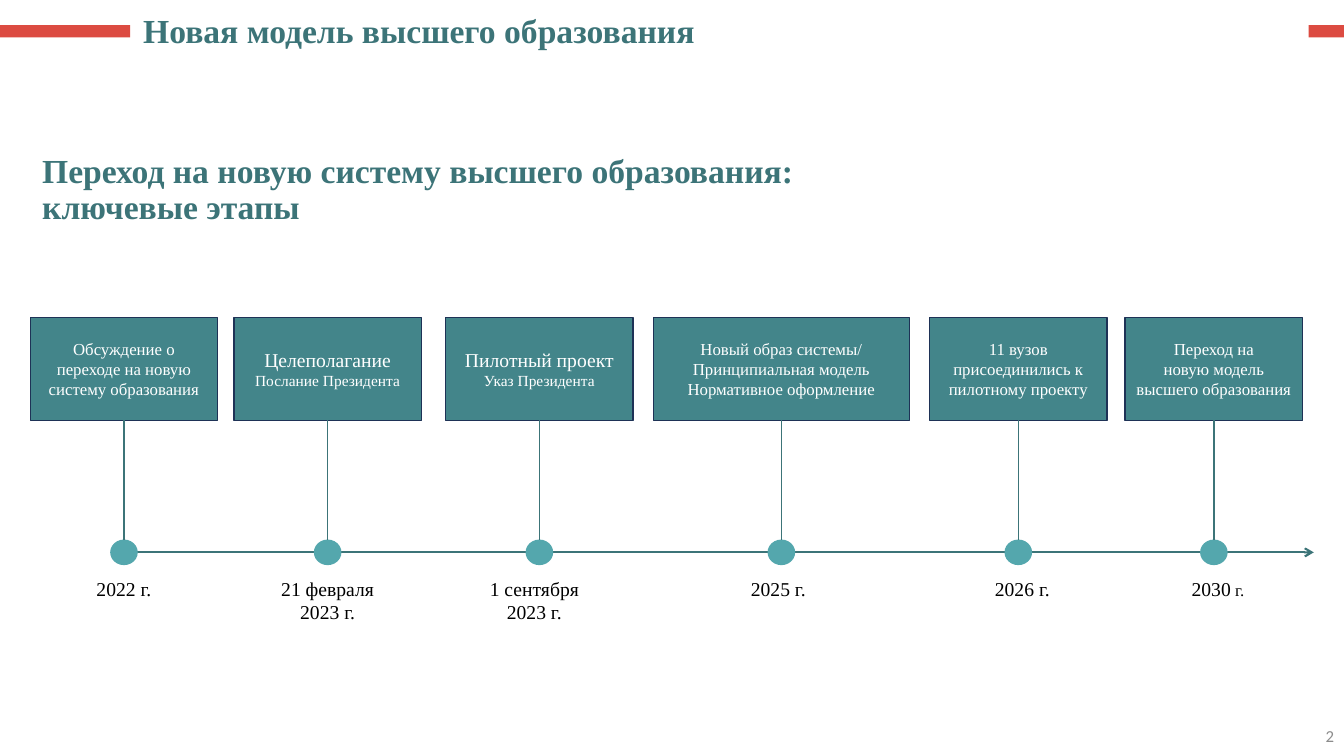
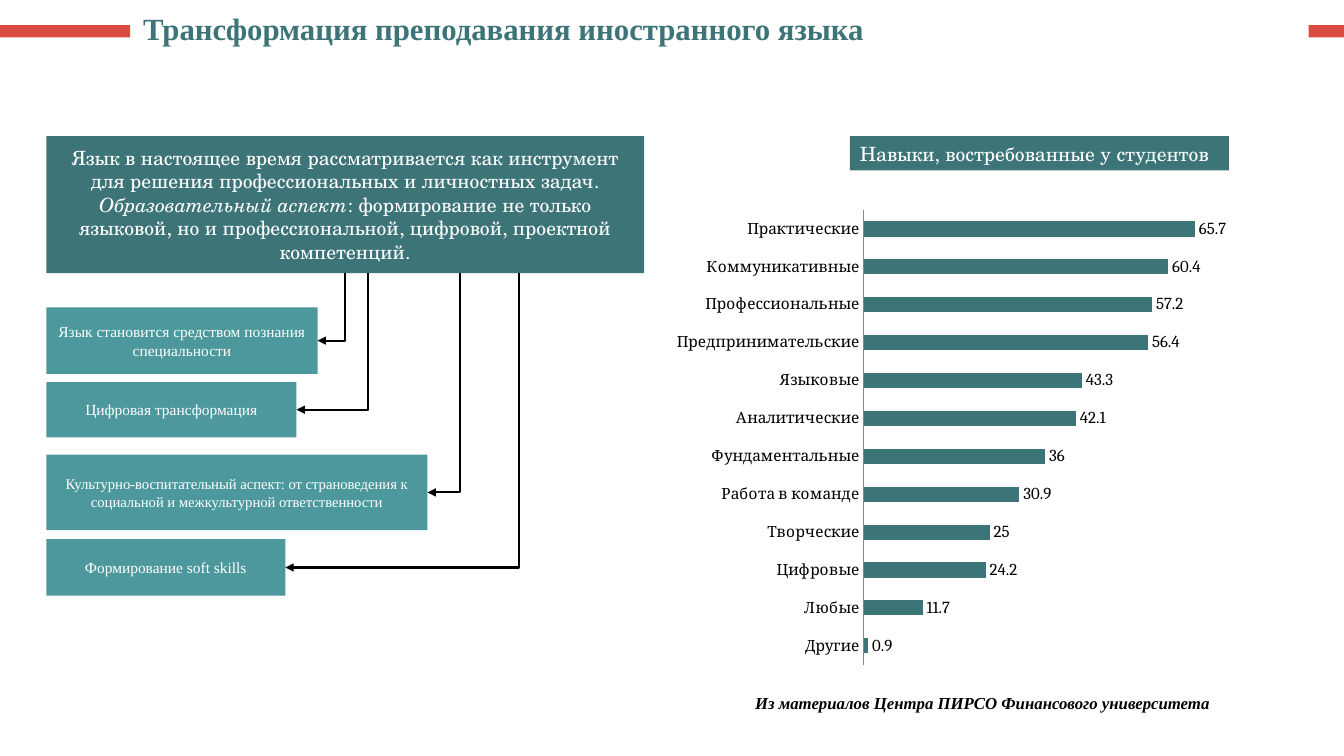
from dataclasses import dataclass

from lxml import etree
from pptx import Presentation
from pptx.chart.data import CategoryChartData
from pptx.dml.color import RGBColor
from pptx.enum.chart import XL_CHART_TYPE, XL_LABEL_POSITION, XL_TICK_MARK
from pptx.enum.shapes import MSO_CONNECTOR, MSO_SHAPE
from pptx.enum.text import MSO_ANCHOR, MSO_AUTO_SIZE, PP_ALIGN
from pptx.oxml import parse_xml
from pptx.oxml.ns import nsdecls, qn
from pptx.util import Pt

LEFT, CENTER, RIGHT = PP_ALIGN.LEFT, PP_ALIGN.CENTER, PP_ALIGN.RIGHT
TOP, MIDDLE = MSO_ANCHOR.TOP, MSO_ANCHOR.MIDDLE
RECTANGLE, OVAL = MSO_SHAPE.RECTANGLE, MSO_SHAPE.OVAL
STRAIGHT, ELBOW = MSO_CONNECTOR.STRAIGHT, MSO_CONNECTOR.ELBOW
SITE_TOP, SITE_BOTTOM = 0, 2
EMU_PER_PX = 9144
TITLE_ONLY = 5
QUARTER_TURN = "5400000"


@dataclass(frozen=True)
class Theme:
    teal: str = "3C7478"
    stage: str = "43858A"
    stage_edge: str = "1E3256"
    marker: str = "54A7AD"
    aspect: str = "4C989D"
    band: str = "DC4B41"
    axis: str = "868686"
    number: str = "8C8C8C"
    black: str = "000000"
    white: str = "FFFFFF"
    serif: str = "Times New Roman"
    school: str = "TeX Gyre Schola"
    sans: str = "Calibri"
    chart: str = "Cambria"
    heading: float = 24
    heading_small: float = 22
    large: float = 14
    normal: float = 12
    small: float = 11
    compact: float = 10.5


THEME = Theme()
BANDS = [(0, 25, 129, 12), (1298, 25, 36, 12)]
TITLE_BOX = (132, 9, 972, 40)
HEADING = dict(size=THEME.heading, color=THEME.teal, bold=True, spacing=0.9)

STAGES = [
    (30, 186, 123, ["Обсуждение о переходе на новую систему образования"],
     ["2022 г."]),
    (232, 186, 325, [[("Целеполагание", {"size": THEME.large})],
                     [("Послание Президента", {"size": THEME.small})]],
     ["21 февраля", "2023 г."]),
    (442, 186, 530, [[("Пилотный проект", {"size": THEME.large})],
                     [("Указ Президента", {"size": THEME.small})]],
     ["1 сентября", "2023 г."]),
    (648, 254, 772, ["Новый образ системы/ Принципиальная модель",
                     "Нормативное оформление"], ["2025 г."]),
    (922, 176, 1014, ["11 вузов присоединились к пилотному проекту"],
     ["2026 г."]),
    (1116, 176, 1208, ["Переход на", "новую модель высшего образования"],
     [[("2030", {}), (" г.", {"size": THEME.normal})]]),
]

ASPECTS = [
    (305, 269, 66, 342, THEME.small,
     "Язык становится средством познания специальности"),
    (379, 248, 55, 365, THEME.small, "Цифровая трансформация"),
    (451, 378, 75, 456, THEME.compact,
     "Культурно-воспитательный аспект: от страноведения к "
     "социальной и межкультурной ответственности"),
    (535, 237, 56, 515, THEME.small, "Формирование soft skills"),
]

SKILLS = [
    ("Другие", 0.9), ("Любые", 11.7), ("Цифровые", 24.2),
    ("Творческие", 25), ("Работа в команде", 30.9),
    ("Фундаментальные", 36), ("Аналитические", 42.1), ("Языковые", 43.3),
    ("Предпринимательские", 56.4), ("Профессиональные", 57.2),
    ("Коммуникативные", 60.4), ("Практические", 65.7),
]


def px(*lengths):
    return [int(length * EMU_PER_PX) for length in lengths]


def rgb(color):
    return RGBColor.from_string(color)


def format_font(font, size, name, color, bold=False, italic=False):
    font.size = Pt(size)
    font.name = name
    font.color.rgb = rgb(color)
    font.bold = bold
    font.italic = italic


def write_text(frame, paragraphs, align=LEFT, anchor=TOP, spacing=None,
               inset=None, size=THEME.normal, name=THEME.serif,
               color=THEME.black, bold=False, italic=False):
    base = dict(size=size, name=name, color=color, bold=bold, italic=italic)
    frame.word_wrap = True
    frame.auto_size = MSO_AUTO_SIZE.NONE
    frame.vertical_anchor = anchor
    if inset is not None:
        frame.margin_left = frame.margin_right = inset
        frame.margin_top = frame.margin_bottom = inset
    for index, content in enumerate(paragraphs):
        paragraph = frame.add_paragraph() if index else frame.paragraphs[0]
        paragraph.alignment = align
        if spacing:
            paragraph.line_spacing = spacing
        runs = [(content, {})] if isinstance(content, str) else content
        for text, changes in runs:
            run = paragraph.add_run()
            run.text = text
            format_font(run.font, **{**base, **changes})


def add_text(slide, box, paragraphs, **style):
    write_text(slide.shapes.add_textbox(*px(*box)).text_frame,
               paragraphs, **style)


def add_block(slide, box, fill, paragraphs=(), edge=None, kind=RECTANGLE,
              **style):
    block = slide.shapes.add_shape(kind, *px(*box))
    block.shadow.inherit = False
    block.fill.solid()
    block.fill.fore_color.rgb = rgb(fill)
    if edge:
        block.line.color.rgb = rgb(edge)
        block.line.width = Pt(1)
    else:
        block.line.fill.background()
    if paragraphs:
        write_text(block.text_frame, paragraphs,
                   **{"align": CENTER, "anchor": MIDDLE,
                      "color": THEME.white, **style})
    return block


def add_line(slide, ends, color, width, arrow=None, kind=STRAIGHT):
    line = slide.shapes.add_connector(kind, *px(*ends))
    line.line.color.rgb = rgb(color)
    line.line.width = Pt(width)
    if arrow:
        outline = line.line._get_or_add_ln()
        etree.SubElement(outline, qn("a:tailEnd"), type=arrow)
    etree.SubElement(line.element.spPr, qn("a:effectLst"))
    return line


def add_bent_arrow(slide, start_x, start_y, end_x, end_y):
    drop, reach = end_y - start_y, start_x - end_x
    left = (start_x + end_x - drop) / 2
    top = (start_y + end_y - reach) / 2
    arrow = add_line(slide, (left, top, left + drop, top + reach),
                     THEME.black, 1.5, arrow="triangle", kind=ELBOW)
    properties = arrow.element.spPr
    properties.find(qn("a:xfrm")).set("rot", QUARTER_TURN)
    properties.find(qn("a:prstGeom")).set("prst", "bentConnector2")


def prepare_layout(layout, slide):
    title = layout.placeholders[0]
    title.left, title.top, title.width, title.height = px(*TITLE_BOX)
    for shape_id, box in enumerate(BANDS, start=101):
        band = add_block(slide, box, THEME.band).element
        band.nvSpPr.cNvPr.set("id", str(shape_id))
        layout.shapes.element.append(band)


def add_title(slide, text, **changes):
    write_text(slide.shapes.title.text_frame, [text], **{**HEADING, **changes})


def add_stage(slide, left, width, date_center, label, date):
    center = left + width // 2
    box = add_block(slide, (left, 315, width, 102), THEME.stage, label,
                    edge=THEME.stage_edge)
    marker = add_block(slide, (center - 13, 536, 26, 24), THEME.marker,
                       edge=THEME.marker, kind=OVAL)
    stem = add_line(slide, (center, 417, center, 536), THEME.teal, 1)
    stem.begin_connect(box, SITE_BOTTOM)
    stem.end_connect(marker, SITE_TOP)
    add_text(slide, (date_center - 57, 572, 114, 24 * len(date)), date,
             align=CENTER, inset=0, size=THEME.large)


def build_timeline(slide):
    add_title(slide, "Новая модель высшего образования")
    add_text(slide, (32, 148, 972, 90),
             ["Переход на новую систему высшего образования:",
              "ключевые этапы"], **HEADING)
    add_line(slide, (123, 548, 1303, 548), THEME.teal, 1.5, arrow="arrow")
    for stage in STAGES:
        add_stage(slide, *stage)
    add_text(slide, (1033, 710, 300, 40), ["2"], align=RIGHT, anchor=MIDDLE,
             name=THEME.sans, color=THEME.number)


def add_skills_chart(slide, box):
    data = CategoryChartData()
    data.categories = [skill for skill, _ in SKILLS]
    data.add_series("Series 1", [share for _, share in SKILLS])
    chart = slide.shapes.add_chart(XL_CHART_TYPE.BAR_CLUSTERED, *px(*box),
                                   data).chart
    chart.has_legend = False
    chart.has_title = False
    format_font(chart.font, THEME.normal, THEME.chart, THEME.black)

    scale = chart.value_axis
    scale.minimum_scale, scale.maximum_scale = 0, 70
    scale.has_major_gridlines = False
    scale.visible = False

    skills = chart.category_axis
    skills.major_tick_mark = skills.minor_tick_mark = XL_TICK_MARK.NONE
    skills.format.line.color.rgb = rgb(THEME.axis)
    format_font(skills.tick_labels.font, THEME.small, THEME.chart, THEME.black)

    plot = chart.plots[0]
    plot.gap_width = 150
    plot.vary_by_categories = False
    bars = plot.series[0]
    bars.format.fill.solid()
    bars.format.fill.fore_color.rgb = rgb(THEME.teal)
    plot.has_data_labels = True
    labels = plot.data_labels
    labels.show_value = True
    labels.position = XL_LABEL_POSITION.OUTSIDE_END
    format_font(labels.font, THEME.normal, THEME.chart, THEME.black)

    area = chart.element.chart.plotArea
    for old_layout in area.findall(qn("c:layout")):
        area.remove(old_layout)
    placement = [("layoutTarget", "inner"), ("xMode", "edge"),
                 ("yMode", "edge"), ("x", 0.35), ("y", 0.02),
                 ("w", 0.63), ("h", 0.96)]
    settings = "".join(f'<c:{key} val="{value}"/>' for key, value in placement)
    area.insert(0, parse_xml(
        f'<c:layout {nsdecls("c")}><c:manualLayout>{settings}'
        '</c:manualLayout></c:layout>'))


def build_teaching(slide):
    add_title(slide, "Трансформация преподавания иностранного языка",
              size=THEME.heading_small)
    thesis = [
        ("Язык в настоящее время рассматривается как инструмент для решения "
         "профессиональных и личностных задач. ", {}),
        ("Образовательный аспект", {"italic": True}),
        (": формирование не только языковой, но и профессиональной, "
         "цифровой, проектной компетенций.", {}),
    ]
    left, thesis_top, thesis_height = 46, 135, 136
    add_block(slide, (left, thesis_top, 593, thesis_height), THEME.teal,
              [thesis], size=THEME.large, name=THEME.school)
    for top, width, height, arrow_x, size, text in ASPECTS:
        add_block(slide, (left, top, width, height), THEME.aspect, [text],
                  size=size)
        add_bent_arrow(slide, arrow_x, thesis_top + thesis_height,
                       left + width, top + height / 2)
    add_skills_chart(slide, (662, 199, 556, 470))
    add_block(slide, (843, 135, 376, 34), THEME.teal,
              ["Навыки, востребованные у студентов"], align=LEFT,
              size=THEME.large, name=THEME.school)
    add_text(slide, (739, 682, 538, 30),
             ["Из материалов Центра ПИРСО Финансового университета"],
             bold=True, italic=True)


def main():
    deck = Presentation()
    deck.slide_width, deck.slide_height = px(1333, 750)
    layout = deck.slide_layouts[TITLE_ONLY]
    timeline, teaching = [deck.slides.add_slide(layout) for _ in range(2)]
    prepare_layout(layout, timeline)
    build_timeline(timeline)
    build_teaching(teaching)
    deck.save("out.pptx")


if __name__ == "__main__":
    main()
